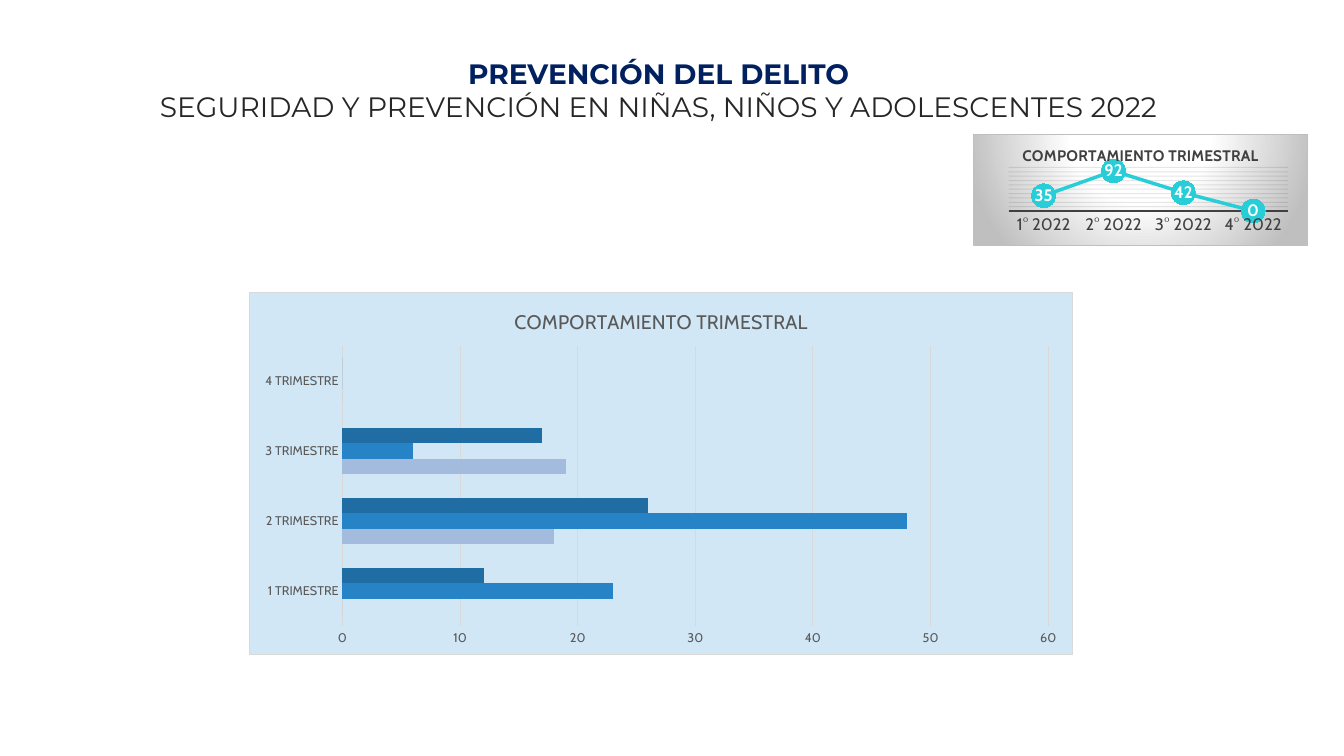
from dataclasses import dataclass

from lxml import etree
from pptx import Presentation
from pptx.chart.chart import Chart
from pptx.chart.data import CategoryChartData
from pptx.dml.color import RGBColor
from pptx.enum.chart import (XL_CHART_TYPE, XL_LABEL_POSITION, XL_MARKER_STYLE,
                             XL_TICK_MARK)
from pptx.enum.text import PP_ALIGN
from pptx.oxml import parse_xml
from pptx.oxml.ns import nsdecls, qn
from pptx.util import Pt

LINE = XL_CHART_TYPE.LINE_MARKERS
BAR = XL_CHART_TYPE.BAR_CLUSTERED
LABEL_CENTER = XL_LABEL_POSITION.CENTER
CIRCLE = XL_MARKER_STYLE.CIRCLE
NO_TICK = XL_TICK_MARK.NONE
CENTER = PP_ALIGN.CENTER

COLORS = {
    "navy": "002060", "ink": "262626", "dark": "404040", "gray": "595959",
    "grid": "D9D9D9", "silver": "BFBFBF", "black": "0D0D0D", "white": "FFFFFF",
    "cyan": "27CED7", "sky": "D1E7F6",
    "pale": "A3BBDC", "blue": "2683C6", "deep": "206DA4",
}
SKY_FILL = f'<a:solidFill><a:srgbClr val="{COLORS["sky"]}"/></a:solidFill>'
SPOT_FILL = (
    '<a:gradFill><a:gsLst>'
    + "".join(f'<a:gs pos="{pos}"><a:srgbClr val="{COLORS[name]}"/></a:gs>'
              for pos, name in ((0, "white"), (39000, "white"), (100000, "silver")))
    + '</a:gsLst><a:path path="circle">'
    '<a:fillToRect l="50000" t="-80000" r="50000" b="180000"/></a:path></a:gradFill>'
)


@dataclass
class Series:
    values: tuple[int, ...]
    color: str


@dataclass
class Panel:
    kind: int
    box: tuple[float, float, float, float]
    plot: tuple[float, float, float, float]
    categories: list[str]
    series: list[Series]
    axis_max: int
    text_color: str
    title_size: int
    title_bold: bool
    label_size: int
    grid_color: str
    fill: str
    border: str


QUARTERS = range(1, 5)
TREND = Panel(
    LINE, (694.8, 95.8, 239.8, 79.9), (0.106, 0.297, 0.835, 0.393),
    [f"{q}° 2022" for q in QUARTERS], [Series((35, 92, 42, 0), "cyan")],
    100, "dark", 11, True, 12, "black", SPOT_FILL, "silver")
DETAIL = Panel(
    BAR, (177.8, 208.4, 589, 259.2), (0.113, 0.149, 0.857, 0.774),
    [f"{q} TRIMESTRE" for q in QUARTERS],
    [Series((0, 18, 19, 0), "pale"), Series((23, 48, 6, 0), "blue"),
     Series((12, 26, 17, 0), "deep")],
    60, "gray", 14, False, 9, "grid", SKY_FILL, "grid")


def rgb(name: str) -> RGBColor:
    return RGBColor.from_string(COLORS[name])


def style_font(font, size: float, color: str, bold: bool = False,
               name: str = "Cabin") -> None:
    font.name, font.size, font.bold = name, Pt(size), bold
    font.color.rgb = rgb(color)


def set_layout(chart: Chart, plot: tuple[float, float, float, float]) -> None:
    area = chart.element.find(f".//{qn('c:plotArea')}")
    for old in area.findall(qn("c:layout")):
        area.remove(old)
    layout = etree.Element(qn("c:layout"))
    manual = etree.SubElement(layout, qn("c:manualLayout"))
    settings = [("layoutTarget", "inner"), ("xMode", "edge"), ("yMode", "edge"),
                *zip("xywh", plot)]
    for tag, value in settings:
        etree.SubElement(manual, qn(f"c:{tag}")).set("val", str(value))
    area.insert(0, layout)


def set_background(chart: Chart, fill: str, border: str) -> None:
    chart.element.find(qn("c:chart")).addnext(parse_xml(
        f'<c:spPr {nsdecls("c", "a")}>{fill}<a:ln w="9525"><a:solidFill>'
        f'<a:srgbClr val="{COLORS[border]}"/></a:solidFill></a:ln></c:spPr>'))


def add_panel(slide, panel: Panel) -> Chart:
    data = CategoryChartData()
    data.categories = panel.categories
    for number, series in enumerate(panel.series, 1):
        data.add_series(f"Series {number}", series.values)
    frame = slide.shapes.add_chart(panel.kind, *map(Pt, panel.box), data)
    chart = frame.chart
    style_font(chart.font, 10, panel.text_color)
    chart.has_legend = False
    chart.has_title = True
    tf = chart.chart_title.text_frame
    tf.text = "COMPORTAMIENTO TRIMESTRAL"
    style_font(tf.paragraphs[0].runs[0].font, panel.title_size,
               panel.text_color, panel.title_bold)
    chart.chart_title.include_in_layout = False

    # Axes and gridlines
    for axis in (chart.category_axis, chart.value_axis):
        axis.major_tick_mark = axis.minor_tick_mark = NO_TICK
        style_font(axis.tick_labels.font, panel.label_size, panel.text_color)
        axis.format.line.fill.background()
    axis = chart.value_axis
    axis.minimum_scale, axis.maximum_scale, axis.major_unit = 0, panel.axis_max, 10
    axis.has_major_gridlines = True
    grid = axis.major_gridlines.format.line
    grid.width = Pt(0.75)
    grid.color.rgb = rgb(panel.grid_color)

    set_layout(chart, panel.plot)
    set_background(chart, panel.fill, panel.border)
    return chart


def add_trend(slide) -> None:
    chart = add_panel(slide, TREND)
    chart.value_axis.visible = False
    base = chart.category_axis.format.line
    base.width = Pt(1.5)
    base.color.rgb = rgb("dark")
    grid = chart.value_axis.major_gridlines.format.line
    tint = grid.fill._xPr.find(f".//{qn('a:srgbClr')}")
    etree.SubElement(tint, qn("a:alpha")).set("val", "10000")

    series = chart.plots[0].series[0]
    color = rgb(TREND.series[0].color)
    series.smooth = False
    series.format.line.width = Pt(2.5)
    series.format.line.color.rgb = color
    series.marker.style, series.marker.size = CIRCLE, 17
    series.marker.format.fill.solid()
    series.marker.format.fill.fore_color.rgb = color
    series.marker.format.line.color.rgb = color
    labels = series.data_labels
    labels.show_value = True
    labels.position = LABEL_CENTER
    style_font(labels.font, 12, "white", True)


def add_detail(slide) -> None:
    plot = add_panel(slide, DETAIL).plots[0]
    plot.gap_width, plot.overlap = 150, 0
    plot.vary_by_categories = False
    for bars, series in zip(plot.series, DETAIL.series):
        bars.format.fill.solid()
        bars.format.fill.fore_color.rgb = rgb(series.color)


def add_heading(slide) -> None:
    tf = slide.shapes.add_textbox(Pt(0), Pt(36.7), Pt(941), Pt(59.8)).text_frame
    tf.word_wrap = True
    tf.text = ("PREVENCIÓN DEL DELITO\n"
               "SEGURIDAD Y PREVENCIÓN EN NIÑAS, NIÑOS Y ADOLESCENTES 2022")
    for p, color, bold in zip(tf.paragraphs, ("navy", "ink"), (True, False)):
        p.alignment = CENTER
        style_font(p.runs[0].font, 20, color, bold, "Montserrat")


def main() -> None:
    prs = Presentation()
    prs.slide_width, prs.slide_height = Pt(960), Pt(540)
    slide = prs.slides.add_slide(prs.slide_layouts[6])
    add_trend(slide)
    add_heading(slide)
    add_detail(slide)
    prs.save("out.pptx")


if __name__ == "__main__":
    main()
